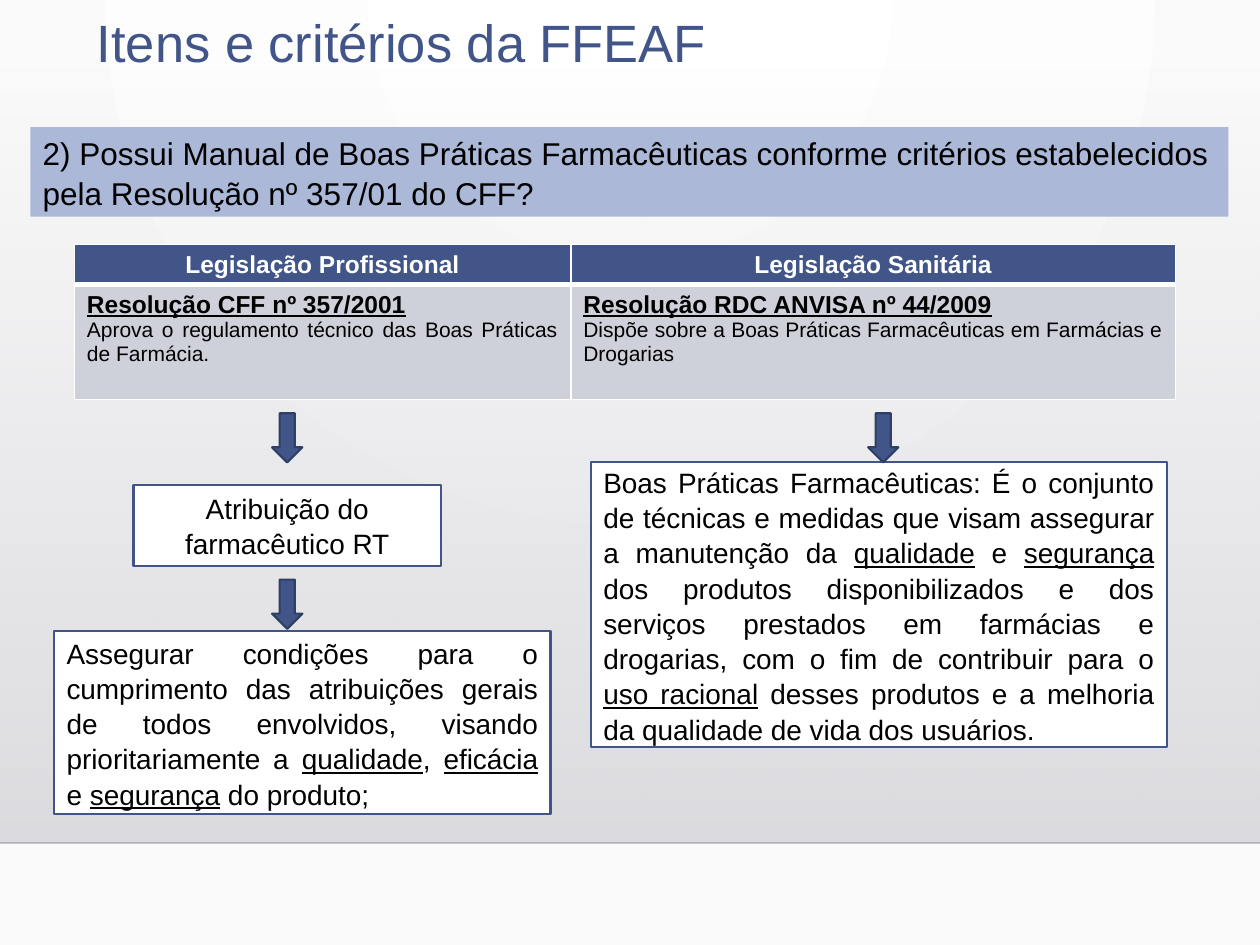
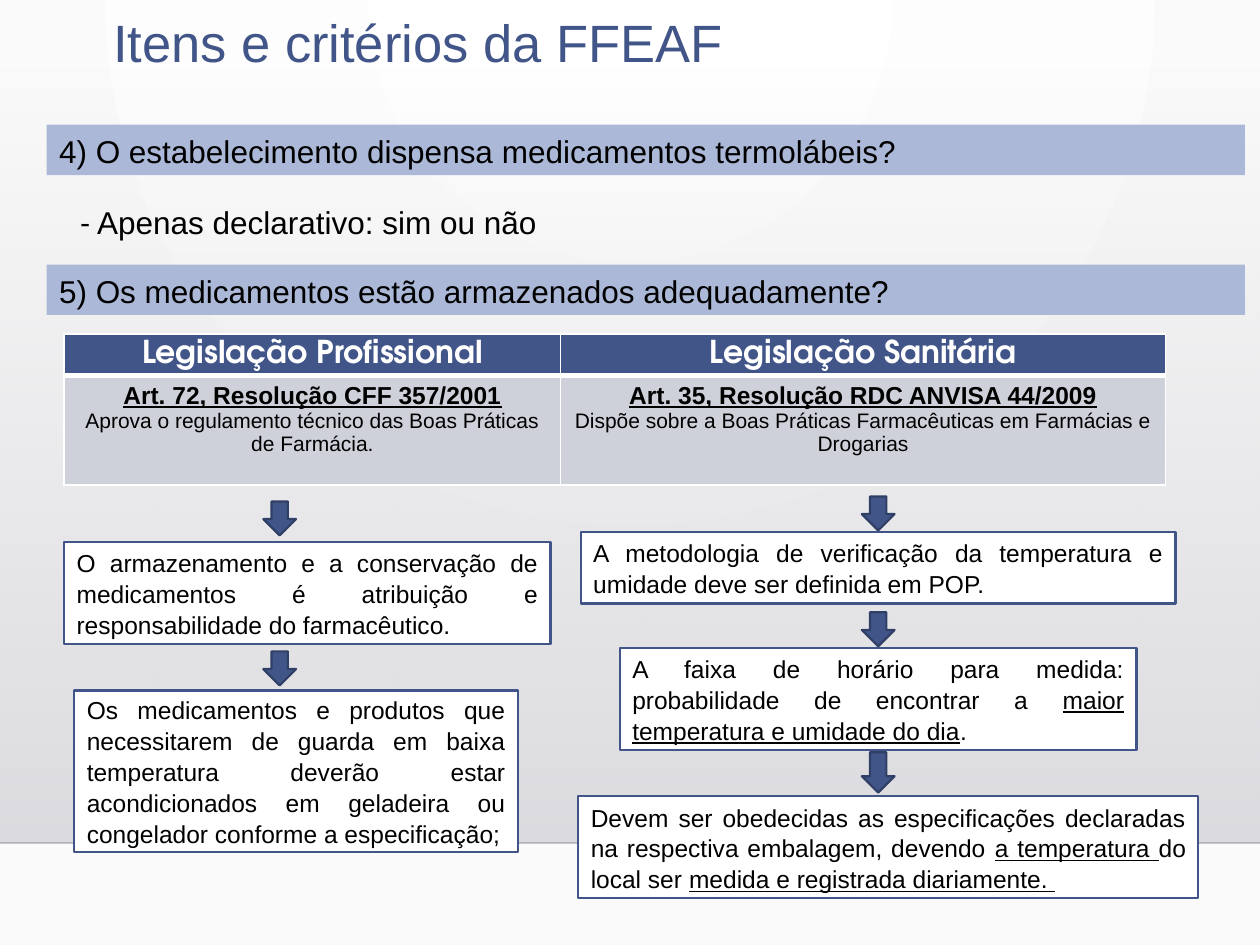
import pptx
import pptx.util
import pptx.dml.color
import pptx.enum.shapes
import pptx.enum.text
import pptx.oxml
import pptx.oxml.ns
from dataclasses import dataclass

SHAPE = pptx.enum.shapes.MSO_SHAPE
ALIGN = pptx.enum.text.PP_ALIGN
ANCHOR = pptx.enum.text.MSO_ANCHOR
AUTO = pptx.enum.text.MSO_AUTO_SIZE
Pt = pptx.util.Pt
qn = pptx.oxml.ns.qn
NS = pptx.oxml.ns.nsdecls("a")
COLS, ROWS = 100, 75


@dataclass(frozen=True)
class Theme:
    navy: str = "415588"
    navy_edge: str = "303F65"
    band: str = "ABB8D7"
    cell: str = "CFD1DA"
    white: str = "FFFFFF"
    black: str = "000000"
    page: tuple = ("FFFFFF", "FAFAFA")
    panel: tuple = ("DCDCE0", "DEDEE2")
    font: str = "Arial"
    dash_font: str = "Calibri"
    display_font: str = "TeX Gyre Adventor"
    title: int = 30
    question: int = 18
    large: int = 16
    body: int = 14
    small: int = 12
    edge: float = 1.25
    leading: float = 1.05


THEME = Theme()


def rgb(color):
    return pptx.dml.color.RGBColor.from_string(color)


def write(tf, text, size=THEME.body, color=THEME.black, font=THEME.font, bold=False,
          align=ALIGN.LEFT, leading=None, p=None):
    """Add a paragraph, or continue p; text between underscores is underlined."""
    if p is None:
        p = tf.add_paragraph() if tf.text else tf.paragraphs[0]
        p.alignment = align
        if leading:
            p.line_spacing = leading
    for i, part in enumerate(text.split("_")):
        if part:
            r = p.add_run()
            r.text = part
            r.font.size, r.font.name, r.font.bold = Pt(size), font, bold
            r.font.underline = i % 2 == 1
            r.font.color.rgb = rgb(color)
    return p


def set_gradient(parent, colors, direction, start_alpha=100):
    """Replace the solid fill inside parent by a two-stop gradient."""
    first, last = colors
    grad = pptx.oxml.parse_xml(
        f'<a:gradFill {NS} rotWithShape="1"><a:gsLst>'
        f'<a:gs pos="0"><a:srgbClr val="{first}"><a:alpha val="{start_alpha * 1000}"/></a:srgbClr></a:gs>'
        f'<a:gs pos="100000"><a:srgbClr val="{last}"/></a:gs></a:gsLst>{direction}</a:gradFill>')
    parent.replace(parent.find(qn("a:solidFill")), grad)


def set_borders(cell, **widths):
    tcPr = cell._tc.get_or_add_tcPr()
    for side in "LRTB":
        width = Pt(widths.get(side, 1))
        tcPr.append(pptx.oxml.parse_xml(
            f'<a:ln{side} {NS} w="{width}"><a:solidFill><a:srgbClr val="{THEME.white}"/>'
            f'</a:solidFill></a:ln{side}>'))


class Deck:
    """Places elements on the current slide, in columns and rows of a 100 by 75 grid."""

    def __init__(self, prs, theme=THEME):
        self.prs, self.theme, self.slide = prs, theme, None

    def x(self, cols):
        return round(self.prs.slide_width * cols / COLS)

    def y(self, rows):
        return round(self.prs.slide_height * rows / ROWS)

    def area(self, left, top, width, height):
        return self.x(left), self.y(top), self.x(width), self.y(height)

    def new_slide(self, title, title_left):
        self.slide = self.prs.slides.add_slide(self.prs.slide_layouts[6])
        self.slide.background.fill.solid()
        set_gradient(self.slide.element.find(".//" + qn("p:bgPr")), self.theme.page,
                     '<a:path path="circle"><a:fillToRect l="43000" r="43000" b="100000"/></a:path>')
        panel = self.shape(SHAPE.RECTANGLE, (0, 5.1, COLS, 61.8), self.theme.white)
        set_gradient(panel.element.spPr, self.theme.panel, '<a:lin ang="5400000" scaled="0"/>', 0)
        self.rule(66.9)
        tf = self.text_box((title_left, 0.9, 58.7, 8.7))
        write(tf, title, size=self.theme.title, color=self.theme.navy, leading=0.9)

    def rule(self, row):
        ln = self.slide.shapes.add_connector(
            pptx.enum.shapes.MSO_CONNECTOR.STRAIGHT, 0, self.y(row), self.x(COLS), self.y(row))
        ln.line.width = Pt(1)
        ln.line.color.rgb = rgb(self.theme.black)
        clr = ln.element.spPr.find(".//" + qn("a:srgbClr"))
        clr.append(pptx.oxml.parse_xml(f'<a:alpha {NS} val="20000"/>'))
        ln.element.spPr.append(pptx.oxml.parse_xml(f"<a:effectLst {NS}/>"))

    def shape(self, kind, area, fill, edge=None):
        sp = self.slide.shapes.add_shape(kind, *self.area(*area))
        sp.shadow.inherit = False
        sp.fill.solid()
        sp.fill.fore_color.rgb = rgb(fill)
        if edge:
            sp.line.color.rgb = rgb(edge)
            sp.line.width = Pt(self.theme.edge)
        else:
            sp.line.fill.background()
        return sp

    def text_box(self, area):
        tf = self.slide.shapes.add_textbox(*self.area(*area)).text_frame
        tf.word_wrap = True
        return tf

    def box(self, area, text, size=THEME.body, align=ALIGN.JUSTIFY, fill=THEME.white, edge=THEME.navy):
        tf = self.shape(SHAPE.RECTANGLE, area, fill, edge).text_frame
        tf.word_wrap, tf.auto_size = True, AUTO.SHAPE_TO_FIT_TEXT
        tf.vertical_anchor = ANCHOR.MIDDLE
        write(tf, text, size=size, align=align, leading=self.theme.leading)

    def question(self, left, top, height, text):
        self.box((left, top, 95.1, height), text, self.theme.question, ALIGN.LEFT, self.theme.band, None)

    def arrows(self, center, tops, width, height):
        for top in tops:
            self.shape(SHAPE.DOWN_ARROW, (center - width / 2, top, width, height),
                       self.theme.navy, self.theme.navy_edge)

    def law_table(self, left, top, heights, laws, head_font, head_size, law_align, about_align):
        """Table with one column per kind of legislation: heading, law, what it is about."""
        widths = (39.4, 48)
        table = self.slide.shapes.add_table(
            2, 2, *self.area(left, top, sum(widths), sum(heights))).table
        for row, height in zip(table.rows, heights):
            row.height = self.y(height)
        for i, (width, (heading, law, about)) in enumerate(zip(widths, laws)):
            table.columns[i].width = self.x(width)
            head, body = table.cell(0, i), table.cell(1, i)
            set_borders(head, B=3)
            set_borders(body, T=3)
            for cell, fill in ((head, self.theme.navy), (body, self.theme.cell)):
                cell.fill.solid()
                cell.fill.fore_color.rgb = rgb(fill)
            head.margin_top = head.margin_bottom = 0
            head.vertical_anchor = ANCHOR.MIDDLE
            write(head.text_frame, heading, size=head_size, color=self.theme.white,
                  font=head_font, bold=True, align=ALIGN.CENTER)
            write(body.text_frame, f"_{law}_", bold=True, align=law_align)
            write(body.text_frame, about, size=self.theme.small, align=about_align)


TITLE = "Itens e critérios da FFEAF"
HEADINGS = ("Legislação Profissional", "Legislação Sanitária")
ABOUT = ("Aprova o regulamento técnico das Boas Práticas de Farmácia.",
         "Dispõe sobre a Boas Práticas Farmacêuticas em Farmácias e Drogarias")


def manual_slide(deck):
    t = deck.theme
    deck.new_slide(TITLE, 6.7)
    laws = ("Resolução CFF nº 357/2001", "Resolução RDC ANVISA nº 44/2009")
    deck.law_table(5.9, 19.4, (3.2, 9.1), zip(HEADINGS, laws, ABOUT),
                   t.font, t.body, ALIGN.LEFT, ALIGN.JUSTIFY)
    deck.box((10.6, 38.5, 24.4, 6.4), "Atribuição do farmacêutico RT", t.large, ALIGN.CENTER)
    deck.box((4.3, 50.1, 39.4, 14.5),
             "Assegurar condições para o cumprimento das atribuições gerais de todos envolvidos, visando "
             "prioritariamente a _qualidade_, _eficácia _e _segurança_ do produto;", t.large)
    deck.box((46.9, 36.7, 45.7, 22.6),
             "Boas Práticas Farmacêuticas: É o conjunto de técnicas e medidas que visam assegurar a "
             "manutenção da _qualidade_ e _segurança_ dos produtos disponibilizados e dos serviços "
             "prestados em farmácias e drogarias, com o fim de contribuir para o _uso racional_ desses "
             "produtos e a melhoria da qualidade de vida dos usuários.", t.large)
    deck.arrows(22.8, (32.8, 46), 2.4, 3.9)
    deck.arrows(70.1, (32.8,), 2.4, 3.9)
    deck.question(2.4, 10.1, 7.1, "2) Possui Manual de Boas Práticas Farmacêuticas conforme critérios "
                                  "estabelecidos pela Resolução nº 357/01 do CFF?")


def storage_slide(deck):
    t = deck.theme
    deck.new_slide(TITLE, 8)
    deck.question(3.7, 9.9, 4, "4) O estabelecimento dispensa medicamentos termolábeis?")
    tf = deck.text_box((5.4, 15.5, 66.4, 4))
    p = write(tf, "- ", size=t.question, font=t.dash_font, leading=t.leading)
    write(tf, "Apenas declarativo: sim ou não", size=t.question, p=p)
    deck.question(3.7, 21, 4, "5) Os medicamentos estão armazenados adequadamente?")
    laws = ("Art. 72, Resolução CFF 357/2001", "Art. 35, Resolução RDC ANVISA 44/2009")
    deck.law_table(5.1, 26.5, (3.3, 8.7), zip(HEADINGS, laws, ABOUT),
                   t.display_font, t.question, ALIGN.CENTER, ALIGN.CENTER)
    for area, text in (
        ((5.1, 43, 38.6, 8.1),
         "O armazenamento e a conservação de medicamentos é atribuição e responsabilidade do farmacêutico."),
        ((5.9, 54.8, 35.2, 12.8),
         "Os medicamentos e produtos que necessitarem de guarda em baixa temperatura deverão estar "
         "acondicionados em geladeira ou congelador conforme a especificação;"),
        ((46.1, 42.2, 47.2, 5.7),
         "A metodologia de verificação da temperatura e umidade deve ser definida em POP."),
        ((49.2, 51.4, 41, 8.1),
         "A faixa de horário para medida: probabilidade de encontrar a "
         "_maior temperatura e umidade do dia_."),
        ((45.9, 63.2, 49.2, 8.1),
         "Devem ser obedecidas as especificações declaradas na respectiva embalagem, devendo "
         "_a temperatura _do local ser _medida e registrada diariamente. _"),
    ):
        deck.box(area, text)
    deck.arrows(22.2, (39.8, 51.7), 2.6, 2.7)
    deck.arrows(69.7, (39.4, 48.6), 2.6, 2.7)
    deck.arrows(69.7, (59.7,), 2.6, 3.2)


def main():
    prs = pptx.Presentation()
    prs.slide_width, prs.slide_height = pptx.util.Inches(10), pptx.util.Inches(7.5)
    deck = Deck(prs)
    manual_slide(deck)
    storage_slide(deck)
    prs.save("out.pptx")


if __name__ == "__main__":
    main()
